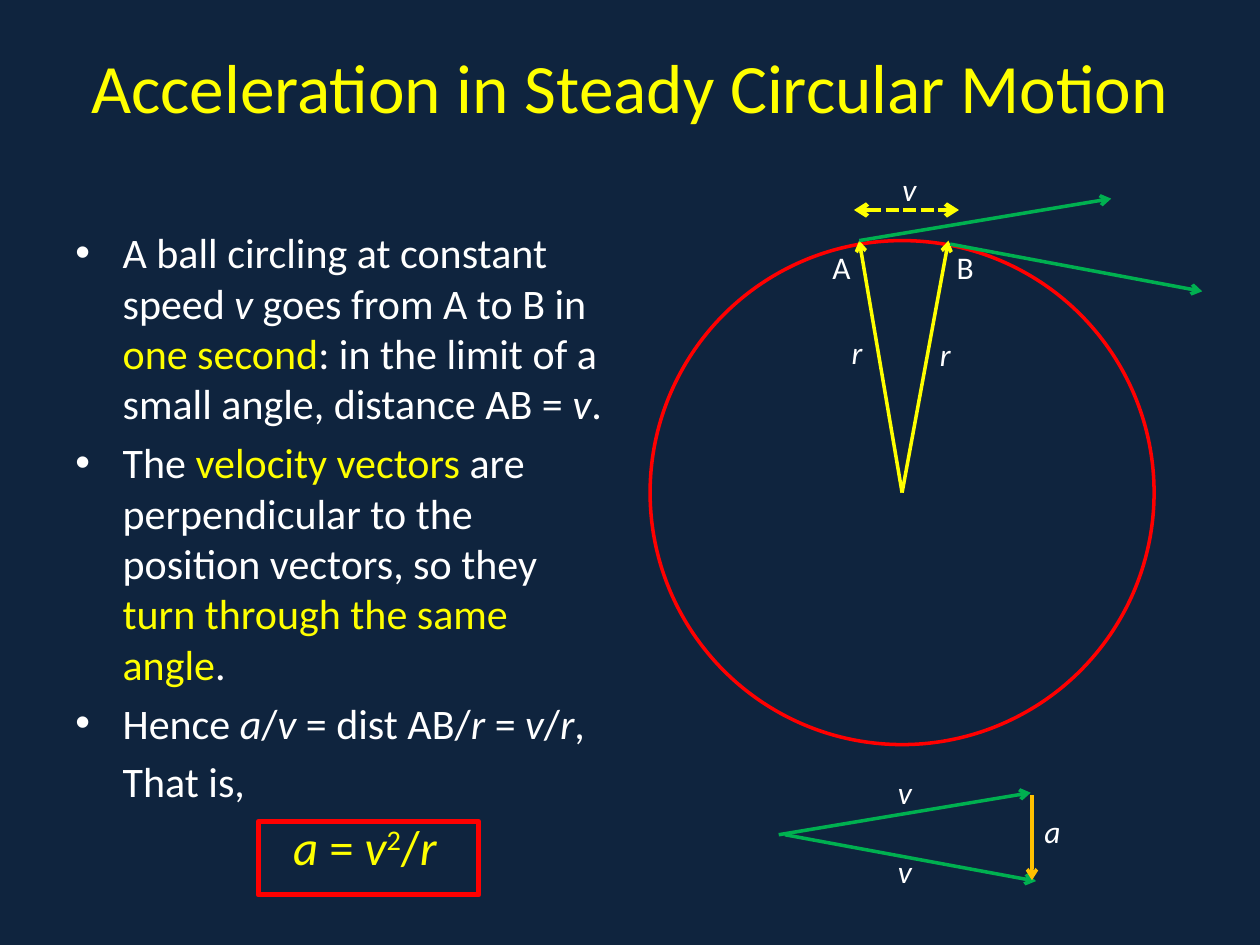
import pptx
import pptx.util
import pptx.dml.color
import pptx.enum.dml
import pptx.enum.shapes
import pptx.enum.text
import pptx.oxml.ns
from lxml import etree

Pt = pptx.util.Pt
qn = pptx.oxml.ns.qn
Align = pptx.enum.text.PP_ALIGN
Shape = pptx.enum.shapes.MSO_SHAPE

HUES = {"navy": "0F243E", "white": "FFFFFF", "yellow": "FFFF00",
        "red": "FF0000", "green": "00B050", "gold": "FFC000"}


def hue(name):
    return pptx.dml.color.RGBColor.from_string(HUES[name])


def add_run(para, text, size, color="white", style=""):
    """Style letters: i for italic, s for superscript."""
    run = para.add_run()
    run.text = text
    run.font.name = "Calibri"
    run.font.size = Pt(size)
    run.font.color.rgb = hue(color)
    run.font.italic = "i" in style
    if "s" in style:
        run.font._element.set("baseline", "30000")


def add_box(slide, x, y, w, h):
    frame = slide.shapes.add_textbox(Pt(x), Pt(y), Pt(w), Pt(h)).text_frame
    frame.word_wrap = True
    return frame


def label(slide, text, x, y, style="i"):
    frame = add_box(slide, x, y, 40, 30)
    add_run(frame.paragraphs[0], text, 18, style=style)


def outline(slide, kind, x, y, w, h, width):
    shape = slide.shapes.add_shape(kind, Pt(x), Pt(y), Pt(w), Pt(h))
    shape.shadow.inherit = False
    shape.fill.background()
    shape.line.color.rgb = hue("red")
    shape.line.width = Pt(width)


def arrow(slide, x, y, start, end, color, width=2, both=False):
    """Arrow between two points given relative to the corner x, y."""
    line = slide.shapes.add_connector(
        pptx.enum.shapes.MSO_CONNECTOR.STRAIGHT,
        Pt(x + start[0]), Pt(y + start[1]), Pt(x + end[0]), Pt(y + end[1]))
    line.line.color.rgb = hue(color)
    line.line.width = Pt(width)
    if both:
        line.line.dash_style = pptx.enum.dml.MSO_LINE.SQUARE_DOT
    pen = line.line._get_or_add_ln()
    for tag in ("a:headEnd", "a:tailEnd") if both else ("a:tailEnd",):
        etree.SubElement(pen, qn(tag), type="arrow")
    etree.SubElement(line._element.spPr, qn("a:effectLst"))


def title(slide, x, y, w, h):
    frame = add_box(slide, x, y, w, h)
    frame.vertical_anchor = pptx.enum.text.MSO_ANCHOR.MIDDLE
    para = frame.paragraphs[0]
    para.alignment = Align.CENTER
    add_run(para, "Acceleration in Steady Circular Motion", 39.6, "yellow")


def indent(para, bullet):
    props = para._p.get_or_add_pPr()
    props.set("marL", str(Pt(27)))
    if bullet:
        props.set("indent", str(-Pt(27)))
        etree.SubElement(props, qn("a:buFont"), typeface="Arial")
        etree.SubElement(props, qn("a:buChar"), char="•")


def body(slide, x, y, w, h):
    points = [
        [("A ball circling at constant speed ",), ("v", "white", "i"),
         (" goes from A to B in ",), ("one second", "yellow"),
         (": in the limit of a small angle, distance AB = ",),
         ("v", "white", "i"), (".",)],
        [("The ",), ("velocity vectors ", "yellow"),
         ("are perpendicular to the position vectors, so they ",),
         ("turn through the same angle", "yellow"), (".",)],
        [("Hence ",), ("a", "white", "i"), ("/",), ("v", "white", "i"),
         (" = dist AB/",), ("r", "white", "i"), (" = ",),
         ("v", "white", "i"), ("/",), ("r", "white", "i"), (",",)],
        [("That is,",)],
        [("a", "yellow", "i"), (" = ", "yellow"), ("v", "yellow", "i"),
         ("2", "yellow", "s"), ("/", "yellow"), ("r", "yellow", "i")],
    ]
    frame = add_box(slide, x, y, w, h)
    for i, runs in enumerate(points):
        para = frame.paragraphs[0] if i == 0 else frame.add_paragraph()
        last = i == len(points) - 1
        size = 28 if last else 24
        para.space_before = Pt(size * 0.2)
        if last:
            para.alignment = Align.CENTER
        indent(para, bullet=i < 3)
        for text, *look in runs:
            add_run(para, text, size, *look)
    # Frame around the result
    outline(slide, Shape.RECTANGLE, x + 111.6, y + 343.4, 126, 42, 3)


def orbit(slide, x, y, size):
    outline(slide, Shape.OVAL, x, y, size, size, 2)
    mid = (size / 2, size / 2)
    # Position vectors
    for end in ((119.5, 0), (170.5, 0)):
        arrow(slide, x, y, mid, end, "yellow")
    # Velocity vectors
    arrow(slide, x, y, (119.5, 0), (263.5, -24), "green")
    arrow(slide, x, y, (171.5, 2), (315.5, 29), "green")
    # Distance covered in one second
    arrow(slide, x, y, (116.5, -17.5), (176.5, -17.5), "yellow", 2.5, True)
    label(slide, "A", x + 97, y + 0.5, "")
    label(slide, "B", x + 168, y + 0.5, "")
    for text, dx, dy in (("v", 137, -44), ("r", 108, 49), ("r", 158.5, 50.5)):
        label(slide, text, x + dx, y + dy)


def change(slide, x, y):
    """Triangle of the two velocities and their difference."""
    arrow(slide, x, y, (3.5, 39), (147, 65.5), "green")
    arrow(slide, x, y, (0, 39), (144, 15), "green")
    arrow(slide, x, y, (144.7, 16.5), (144.7, 65), "gold")
    for text, dx, dy in (("v", 61, 0), ("v", 61, 45.5), ("a", 144.7, 22.5)):
        label(slide, text, x + dx, y + dy)


def main():
    deck = pptx.Presentation()
    deck.slide_width, deck.slide_height = Pt(720), Pt(540)
    slide = deck.slides.add_slide(deck.slide_layouts[6])
    slide.background.fill.solid()
    slide.background.fill.fore_color.rgb = hue("navy")
    title(slide, 36, 12, 648, 74)
    body(slide, 36, 126, 318, 396)
    change(slide, 445, 438)
    orbit(slide, 371.5, 137.5, 288)
    deck.save("out.pptx")


if __name__ == "__main__":
    main()
